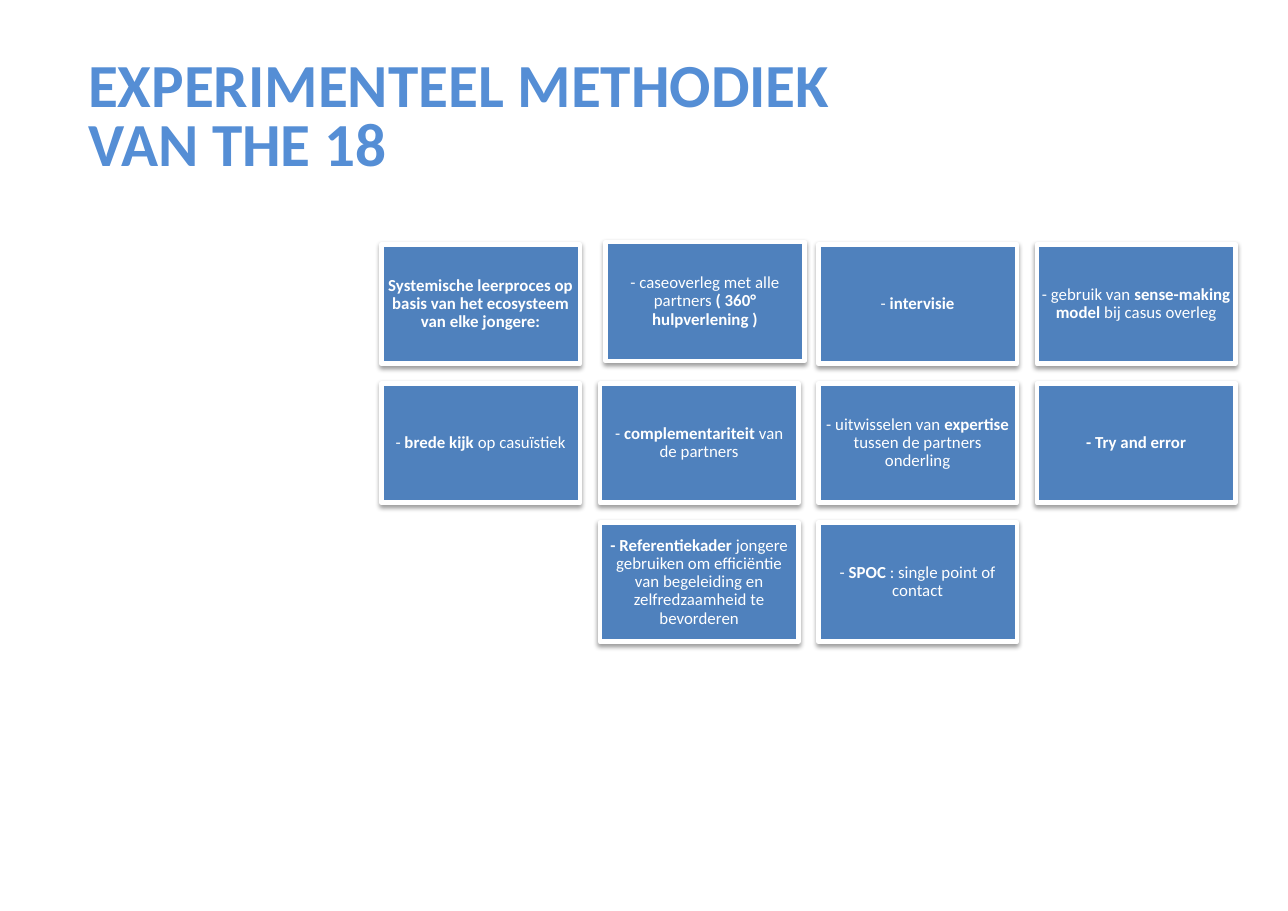
from lxml import etree
from pptx import Presentation
from pptx.dml.color import RGBColor
from pptx.enum import shapes, text
from pptx.oxml import ns
from pptx.util import Pt

TITLE = "EXPERIMENTEEL METHODIEK VAN THE 18"
CARD_ROWS = [
    ["*Systemische leerproces op basis van het ecosysteem van elke jongere:*",
     "- caseoverleg met alle partners *( 360° hulpverlening )*",
     "- *intervisie*",
     "- gebruik van *sense-making model *bij casus overleg"],
    ["- *brede kijk *op casuïstiek",
     "- *complementariteit *van de partners",
     "- uitwisselen van *expertise* tussen de partners onderling",
     "*- Try and error*"],
    ["*- Referentiekader *jongere gebruiken om efficiëntie van begeleiding en zelfredzaamheid te bevorderen",
     "- *SPOC* : single point of contact"],
]
NUDGES = {(0, 1): (3.8, -1.8)}


def color(value):
    return RGBColor.from_string(value)


def apply(obj, values):
    for name, value in values.items():
        setattr(obj, name, value)


def set_margins(tf, x, y):
    apply(tf, {"margin_left": Pt(x), "margin_right": Pt(x),
               "margin_top": Pt(y), "margin_bottom": Pt(y),
               "word_wrap": True, "vertical_anchor": text.MSO_ANCHOR.MIDDLE})


def add_run(p, content, size, fill, bold):
    r = p.add_run()
    r.text = content
    apply(r.font, {"name": "Calibri", "size": Pt(size), "bold": bold})
    r.font.color.rgb = color(fill)


def add_shadow(sp):
    effects = etree.SubElement(sp._element.spPr, ns.qn("a:effectLst"))
    shadow = etree.SubElement(effects, ns.qn("a:outerShdw"), blurRad=str(Pt(3.1)),
                              dist=str(Pt(1.6)), dir="5400000", rotWithShape="0")
    tint = etree.SubElement(shadow, ns.qn("a:srgbClr"), val="000000")
    etree.SubElement(tint, ns.qn("a:alpha"), val="38000")


def add_title(s, left, top, width, height):
    title = s.shapes.title
    apply(title, {"left": Pt(left), "top": Pt(top), "width": Pt(width), "height": Pt(height)})
    tf = title.text_frame
    set_margins(tf, 7.9, 4)
    tf.auto_size = text.MSO_AUTO_SIZE.NONE
    p = tf.paragraphs[0]
    apply(p, {"alignment": text.PP_ALIGN.LEFT, "line_spacing": 0.8})
    add_run(p, TITLE, 40, "558ED5", True)


def add_card(s, content, left, top, width, height):
    sp = s.shapes.add_shape(shapes.MSO_SHAPE.RECTANGLE,
                            Pt(left), Pt(top), Pt(width), Pt(height))
    sp.fill.solid()
    sp.fill.fore_color.rgb = color("4F81BD")
    sp.line.color.rgb = color("FFFFFF")
    sp.line.width = Pt(3)
    add_shadow(sp)
    set_margins(sp.text_frame, 3.3, 3.3)
    p = sp.text_frame.paragraphs[0]
    apply(p, {"alignment": text.PP_ALIGN.CENTER, "line_spacing": 0.9})
    for i, part in enumerate(content.split("*")):
        if part:
            add_run(p, part, 11, "FFFFFF", i % 2 == 1)


def add_cards(s, left, top, width):
    columns = max(map(len, CARD_ROWS))
    card_w = width / (columns + 0.1 * (columns - 1))
    card_h, gap = 0.6 * card_w, 0.1 * card_w
    for row, cards in enumerate(CARD_ROWS):
        indent = (columns - len(cards)) / 2
        for col, content in enumerate(cards):
            dx, dy = NUDGES.get((row, col), (0, 0))
            add_card(s, content, left + (col + indent) * (card_w + gap) + dx,
                     top + row * (card_h + gap) + dy, card_w, card_h)


def main():
    prs = Presentation()
    apply(prs, {"slide_width": Pt(841.68), "slide_height": Pt(595.44)})
    s = prs.slides.add_slide(prs.slide_layouts[5])
    add_title(s, 49.7, 28.1, 558.7, 99.4)
    add_cards(s, 249.2, 159.9, 558.2)
    prs.save("out.pptx")


if __name__ == "__main__":
    main()
